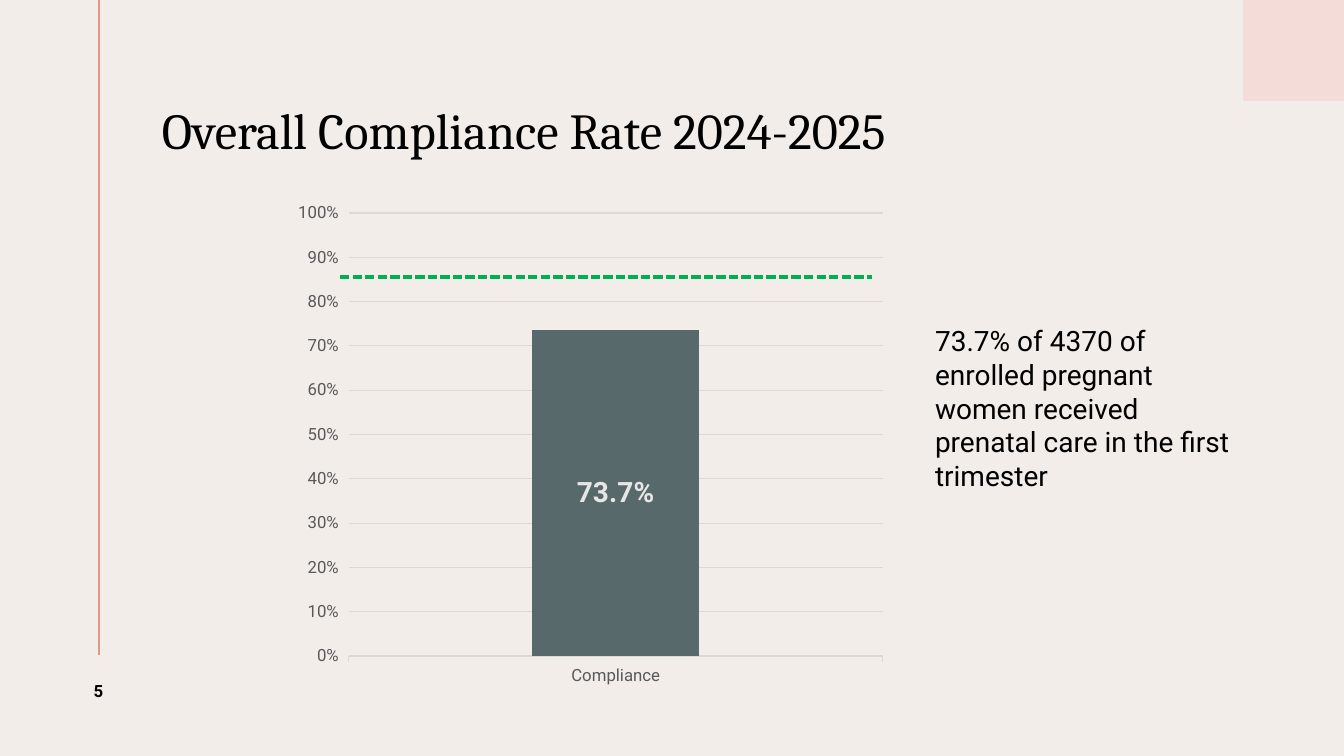
from dataclasses import dataclass

import pptx
import pptx.chart.data
import pptx.dml.color
import pptx.enum.chart
import pptx.enum.dml
import pptx.enum.shapes
import pptx.enum.text
import pptx.oxml
import pptx.oxml.ns
import pptx.util

PX = 914400 / 100.8
COLORS = {
    "background": "F3EDEA",
    "corner": "F4DDD8",
    "rule": "DF998B",
    "text": "000000",
    "axis": "595959",
    "grid": "D9D9D9",
    "bar": "58696B",
    "label": "E7E6E6",
    "target": "00B050",
}
PP_ALIGN = pptx.enum.text.PP_ALIGN
ANCHOR = pptx.enum.text.MSO_ANCHOR
DASH = pptx.enum.dml.MSO_LINE


@dataclass
class Line:
    start: tuple[int, int]
    end: tuple[int, int]
    color: str
    width: float
    dash: DASH | None = None


@dataclass
class Label:
    text: str
    box: tuple[int, int, int, int]
    size: int
    font: str = "Roboto"
    bold: bool = False
    align: PP_ALIGN = PP_ALIGN.LEFT
    anchor: ANCHOR = ANCHOR.MIDDLE
    left_inset: int = 0


RULE = Line((99, 0), (99, 655), "rule", 1.5)
TARGET = Line((340, 277), (872, 277), "target", 2.25, DASH.SQUARE_DOT)
TITLE = Label("Overall Compliance Rate 2024-2025", (162, 55, 1082, 157), 36, "Cambria")
SUMMARY = Label(
    "73.7% of 4370 of enrolled pregnant women received prenatal care in the first trimester",
    (935, 319, 318, 252), 20, anchor=ANCHOR.TOP)
PAGE_NUMBER = Label("5", (45, 655, 107, 72), 12, bold=True, align=PP_ALIGN.CENTER, left_inset=10)


def emu(*lengths: int) -> list[int]:
    return [pptx.util.Emu(round(n * PX)) for n in lengths]


def rgb(name: str) -> pptx.dml.color.RGBColor:
    return pptx.dml.color.RGBColor.from_string(COLORS[name])


def style_font(font, size: int, color: str, name: str = "Roboto", bold: bool = False) -> None:
    font.size = pptx.util.Pt(size)
    font.name = name
    font.bold = bold
    font.color.rgb = rgb(color)


def style_line(line, color: str, width: float) -> None:
    line.color.rgb = rgb(color)
    line.width = pptx.util.Pt(width)


def add_line(s, line: Line) -> None:
    cx = s.shapes.add_connector(
        pptx.enum.shapes.MSO_CONNECTOR.STRAIGHT, *emu(*line.start, *line.end))
    style_line(cx.line, line.color, line.width)
    if line.dash is not None:
        cx.line.dash_style = line.dash
    cx._element.spPr.append(pptx.oxml.parse_xml(
        f"<a:effectLst {pptx.oxml.ns.nsdecls('a')}/>"))


def fill_label(sp, label: Label):
    """Place and format a text shape, and return its paragraph."""
    sp.left, sp.top, sp.width, sp.height = emu(*label.box)
    tf = sp.text_frame
    tf.text = label.text
    tf.word_wrap = True
    tf.auto_size = pptx.enum.text.MSO_AUTO_SIZE.NONE
    tf.vertical_anchor = label.anchor
    tf.margin_left, tf.margin_right, tf.margin_top, tf.margin_bottom = emu(
        label.left_inset, 10, 5, 5)
    p = tf.paragraphs[0]
    p.alignment = label.align
    style_font(p.runs[0].font, label.size, "text", label.font, label.bold)
    return p


def add_label(s, label: Label):
    return fill_label(s.shapes.add_textbox(*emu(*label.box)), label)


def add_compliance_chart(s) -> None:
    data = pptx.chart.data.CategoryChartData()
    data.categories = ["Compliance"]
    data.add_series("Series 1", [0.737])
    chart = s.shapes.add_chart(
        pptx.enum.chart.XL_CHART_TYPE.COLUMN_CLUSTERED, *emu(286, 193, 609, 503), data).chart
    chart.has_title = False
    chart.has_legend = False
    style_font(chart.font, 10, "text")

    plot = chart.plots[0]
    plot.vary_by_categories = False
    plot.gap_width = 219
    plot.overlap = -27
    fill = plot.series[0].format.fill
    fill.solid()
    fill.fore_color.rgb = rgb("bar")
    labels = plot.series[0].data_labels
    labels.show_value = True
    labels.number_format = "0.0%"
    labels.number_format_is_linked = False
    labels.position = pptx.enum.chart.XL_LABEL_POSITION.CENTER
    style_font(labels.font, 20, "label", bold=True)

    for axis in (chart.category_axis, chart.value_axis):
        axis.major_tick_mark = pptx.enum.chart.XL_TICK_MARK.OUTSIDE
        style_font(axis.tick_labels.font, 12, "axis")
    style_line(chart.category_axis.format.line, "grid", 0.75)
    value_axis = chart.value_axis
    value_axis.format.line.fill.background()
    value_axis.minimum_scale = 0
    value_axis.maximum_scale = 1
    value_axis.major_unit = 0.1
    value_axis.tick_labels.number_format = "0%"
    value_axis.tick_labels.number_format_is_linked = False
    style_line(value_axis.major_gridlines.format.line, "grid", 0.75)


def main() -> None:
    prs = pptx.Presentation()
    prs.slide_width, prs.slide_height = emu(1344, 756)
    s = prs.slides.add_slide(prs.slide_layouts.get_by_name("Title Only"))
    s.background.fill.solid()
    s.background.fill.fore_color.rgb = rgb("background")

    corner = s.shapes.add_shape(
        pptx.enum.shapes.MSO_SHAPE.RECTANGLE, *emu(1243, 0, 101, 101))
    corner.shadow.inherit = False
    corner.fill.solid()
    corner.fill.fore_color.rgb = rgb("corner")
    corner.line.fill.background()

    add_line(s, RULE)
    fill_label(s.shapes.title, TITLE).line_spacing = 0.9
    p = add_label(s, SUMMARY)
    p.space_before = pptx.util.Pt(10)
    p.space_after = pptx.util.Pt(12)
    p = add_label(s, PAGE_NUMBER)
    p.runs[0].font._element.set("spc", "150")
    add_compliance_chart(s)
    add_line(s, TARGET)
    prs.save("out.pptx")


if __name__ == "__main__":
    main()
